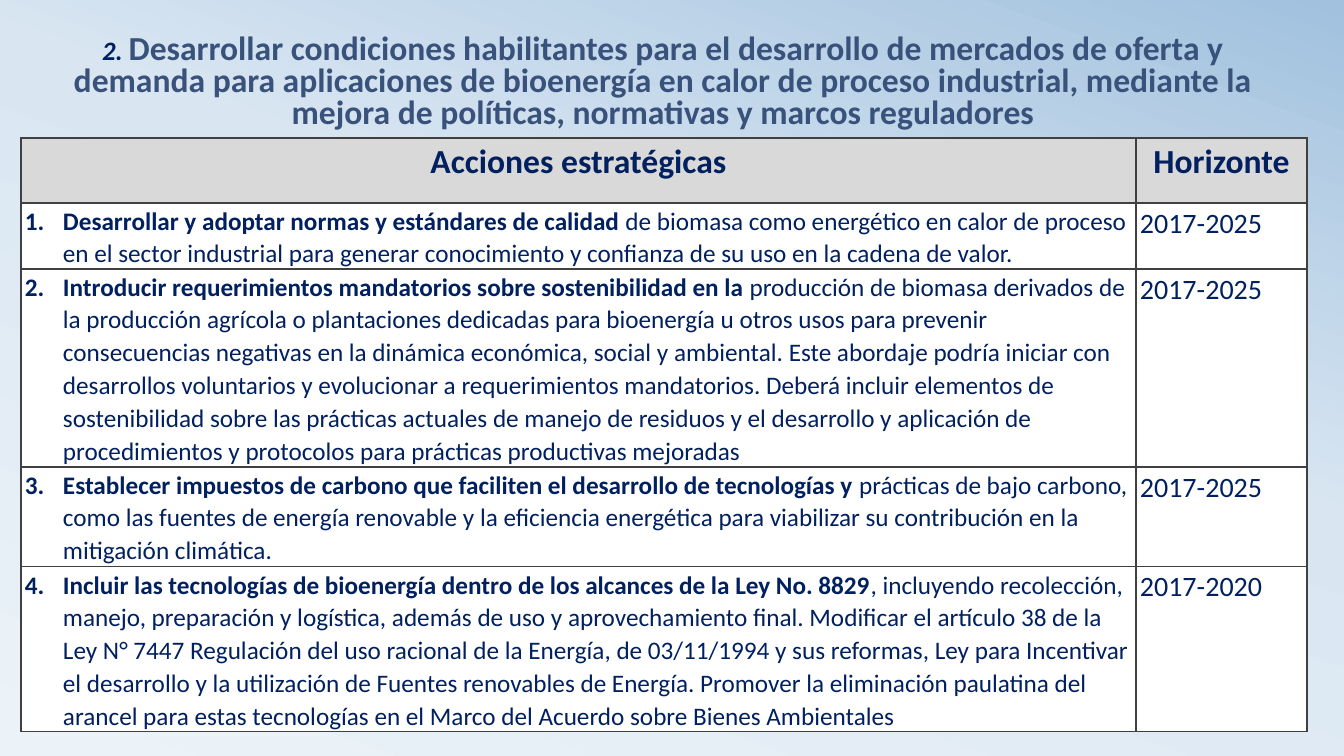
from copy import deepcopy

from lxml.etree import SubElement
from pptx import Presentation
from pptx.dml.color import RGBColor
from pptx.enum.text import MSO_ANCHOR as Anchor, PP_ALIGN as Align
from pptx.oxml import parse_xml
from pptx.oxml.ns import nsdecls, qn
from pptx.util import Pt

EMU_PER_PX = 914400 / 100.8

TITLE = ("Desarrollar condiciones habilitantes para el desarrollo de mercados de oferta y "
         "demanda para aplicaciones de bioenergía en calor de proceso industrial, mediante la "
         "mejora de políticas, normativas y marcos reguladores")
HEADINGS = ("Acciones estratégicas", "Horizonte")
# Bold opening, remaining text, horizon
ACTIONS = [
    ("Desarrollar y adoptar normas y estándares de calidad ",
     "de biomasa como energético en calor de proceso en el sector industrial para generar "
     "conocimiento y confianza de su uso en la cadena de valor.",
     "2017-2025"),
    ("Introducir requerimientos mandatorios sobre sostenibilidad en la ",
     "producción de biomasa derivados de la producción agrícola o plantaciones dedicadas para "
     "bioenergía u otros usos para prevenir consecuencias negativas en la dinámica económica, "
     "social y ambiental. Este abordaje podría iniciar con desarrollos voluntarios y evolucionar "
     "a requerimientos mandatorios. Deberá incluir elementos de sostenibilidad sobre las "
     "prácticas actuales de manejo de residuos y el desarrollo y aplicación de procedimientos y "
     "protocolos para prácticas productivas mejoradas",
     "2017-2025"),
    ("Establecer impuestos de carbono que faciliten el desarrollo de tecnologías y ",
     "prácticas de bajo carbono, como las fuentes de energía renovable y la eficiencia "
     "energética para viabilizar su contribución en la mitigación climática.",
     "2017-2025"),
    ("Incluir las tecnologías de bioenergía dentro de los alcances de la Ley No. 8829",
     ", incluyendo recolección, manejo, preparación y logística, además de uso y "
     "aprovechamiento final. Modificar el artículo 38 de la Ley N° 7447 Regulación del uso "
     "racional de la Energía, de 03/11/1994 y sus reformas, Ley para Incentivar el desarrollo y "
     "la utilización de Fuentes renovables de Energía. Promover la eliminación paulatina del "
     "arancel para estas tecnologías en el Marco del Acuerdo sobre Bienes Ambientales",
     "2017-2020"),
]


def px(length):
    return round(length * EMU_PER_PX)


def rgb(value):
    return RGBColor.from_string(value)


def write(paragraph, text, size=18, color="002060", bold=False, italic=False):
    run = paragraph.add_run()
    run.text = text
    font = run.font
    font.name, font.size, font.bold, font.italic = "Calibri", Pt(size), bold, italic
    font.color.rgb = rgb(color)


def number(paragraph, start, indent=38):
    """Make the paragraph a numbered item with a hanging indent in px."""
    properties = paragraph._p.get_or_add_pPr()
    properties.set("marL", str(px(indent)))
    properties.set("indent", str(-px(indent)))
    SubElement(properties, qn("a:buAutoNum"), type="arabicPeriod", startAt=str(start))


class StrategySlide:
    border = "404040"
    heading_fill = "D9D9D9"
    body_fill = "FFFFFF"

    def __init__(self, presentation):
        self.slide = presentation.slides.add_slide(presentation.slide_layouts[6])

    def background(self, stops, angle):
        fill = self.slide.background.fill
        fill.gradient()
        fill.gradient_angle = angle
        stop_list = self.slide.element.xpath(".//p:bg//a:gsLst")[0]
        stop_list.append(deepcopy(stop_list[-1]))
        for stop, (position, color) in zip(fill.gradient_stops, stops):
            stop.position = position
            stop.color.rgb = rgb(color)

    def title(self, left, top, width, height):
        frame = self.slide.shapes.add_textbox(px(left), px(top), px(width), px(height)).text_frame
        frame.word_wrap = True
        frame.vertical_anchor = Anchor.BOTTOM
        heading = frame.paragraphs[0]
        heading.alignment = Align.CENTER
        heading.line_spacing = 0.8
        write(heading, "2. ", size=19, bold=True, italic=True)
        write(heading, TITLE, size=24, color="39527B", bold=True)

    def table(self, left, top, widths, heights):
        table = self.slide.shapes.add_table(
            len(heights), len(widths), px(left), px(top),
            px(sum(widths)), px(sum(heights))).table
        table.first_row = table.horz_banding = False
        for column, width in zip(table.columns, widths):
            column.width = px(width)
        for row, height in zip(table.rows, heights):
            row.height = px(height)
        return table

    def cell(self, cell, fill):
        """Style the cell and return its paragraph."""
        cell.margin_left = cell.margin_right = px(4)
        cell.margin_top, cell.margin_bottom = px(1), 0
        cell.fill.solid()
        cell.fill.fore_color.rgb = rgb(fill)
        properties = cell._tc.get_or_add_tcPr()
        for place, side in enumerate("LRTB"):
            properties.insert(place, parse_xml(
                f'<a:ln{side} {nsdecls("a")} w="{Pt(1)}"><a:solidFill>'
                f'<a:srgbClr val="{self.border}"/></a:solidFill></a:ln{side}>'))
        paragraph = cell.text_frame.paragraphs[0]
        paragraph.line_spacing = 1.07
        paragraph.space_after = Pt(8)
        return paragraph

    def headings(self, table):
        for column, text in enumerate(HEADINGS):
            heading = self.cell(table.cell(0, column), self.heading_fill)
            heading.alignment = Align.CENTER
            write(heading, text, size=24, bold=True)

    def actions(self, table):
        for row, (opening, rest, horizon) in enumerate(ACTIONS, start=1):
            action = self.cell(table.cell(row, 0), self.body_fill)
            number(action, row)
            write(action, opening, bold=True)
            write(action, rest)
            write(self.cell(table.cell(row, 1), self.body_fill), horizon, size=20)


def main():
    presentation = Presentation()
    presentation.slide_width, presentation.slide_height = px(1344), px(756)
    strategy = StrategySlide(presentation)
    strategy.background([(0, "ECF3F8"), (0.58, "D9E6F2"), (1, "A1C1DE")], angle=70)
    strategy.title(37, 21, 1252, 115)
    table = strategy.table(21, 138, widths=(1115, 171), heights=(65, 66, 198, 100, 165))
    strategy.headings(table)
    strategy.actions(table)
    presentation.save("out.pptx")


if __name__ == "__main__":
    main()
